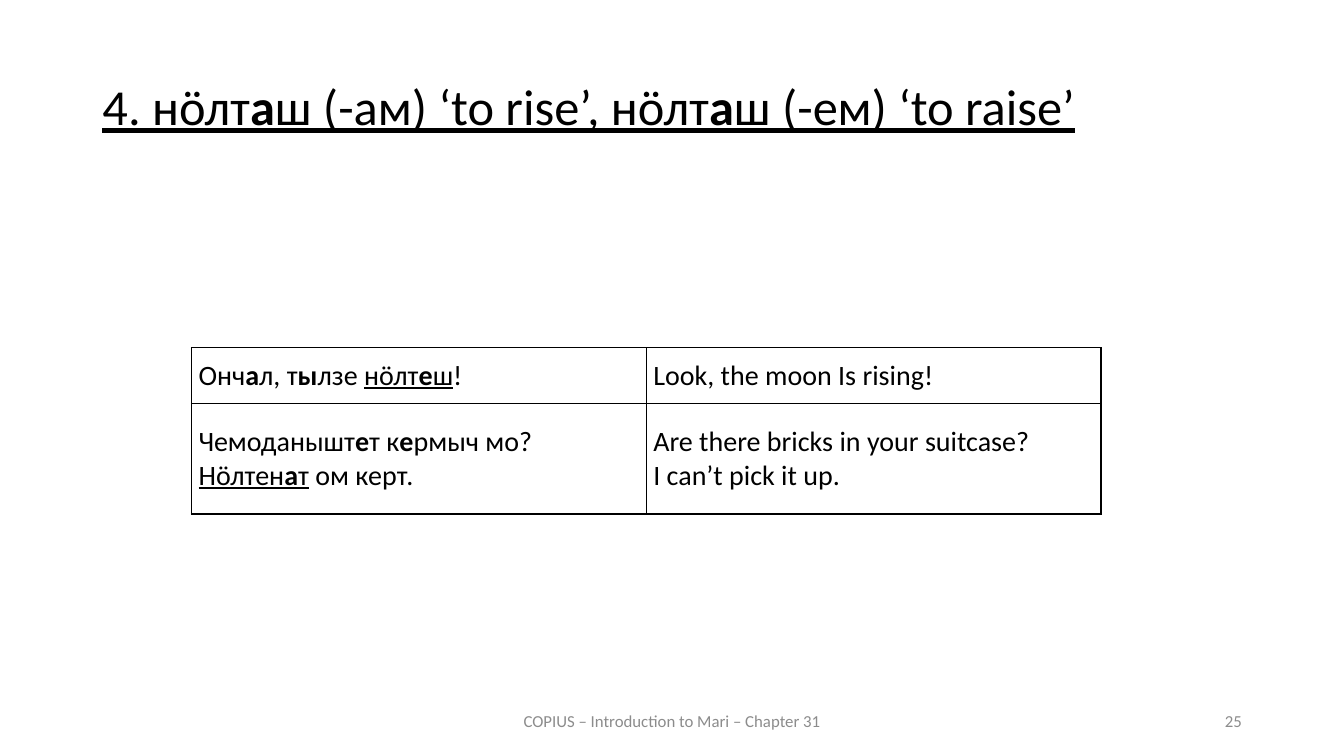
from dataclasses import dataclass

from pptx import Presentation
from pptx.dml.color import RGBColor
from pptx.enum.text import MSO_ANCHOR, MSO_AUTO_SIZE, PP_ALIGN
from pptx.oxml import parse_xml
from pptx.oxml.ns import nsdecls
from pptx.util import Inches, Pt


@dataclass(frozen=True)
class Theme:
    font: str = "Calibri"
    ink: str = "000000"
    gray: str = "8C8C8C"
    head: int = 36
    body: int = 20
    foot: int = 12
    rule: int = 1


class Page:
    """One slide on a grid of 160 columns by 90 rows, twelve to the inch."""

    def __init__(self, deck, theme):
        self.theme = theme
        self.slide = deck.slides.add_slide(deck.slide_layouts[5])

    def place(self, *cells):
        return [Inches(cell / 12) for cell in cells]

    def label(self, para, text, size, color):
        """Add runs; _marks_ underline and *marks* make bold."""
        for i, part in enumerate(text.split("_")):
            for j, bit in enumerate(part.split("*")):
                for k, line in enumerate(bit.split("\n")):
                    if k:
                        para.add_line_break()
                    if line:
                        run = para.add_run()
                        run.text = line
                        font = run.font
                        font.name, font.size = self.theme.font, Pt(size)
                        font.color.rgb = RGBColor.from_string(color)
                        font.underline, font.bold = i % 2 == 1, j % 2 == 1

    def title(self, text, *area):
        shape = self.slide.shapes.title
        shape.left, shape.top, shape.width, shape.height = self.place(*area)
        frame = shape.text_frame
        frame.word_wrap = True
        frame.auto_size = MSO_AUTO_SIZE.NONE
        frame.vertical_anchor = MSO_ANCHOR.TOP
        para = frame.paragraphs[0]
        para.alignment = PP_ALIGN.JUSTIFY
        para.line_spacing = 0.9
        self.label(para, text, self.theme.head, self.theme.ink)

    def footer(self, text, align, *area):
        frame = self.slide.shapes.add_textbox(*self.place(*area)).text_frame
        frame.word_wrap = True
        frame.vertical_anchor = MSO_ANCHOR.MIDDLE
        para = frame.paragraphs[0]
        para.alignment = align
        self.label(para, text, self.theme.foot, self.theme.gray)

    def border(self, cell):
        props = cell._tc.get_or_add_tcPr()
        for side in "LRTB":
            props.append(parse_xml(
                f'<a:ln{side} {nsdecls("a")} w="{Pt(self.theme.rule)}">'
                f'<a:solidFill><a:srgbClr val="{self.theme.ink}"/></a:solidFill>'
                f'</a:ln{side}>'))

    def table(self, rows, heights, *area):
        shape = self.slide.shapes.add_table(
            len(rows), len(rows[0]), *self.place(*area, sum(heights)))
        grid = shape.table
        grid.first_row = grid.horz_banding = False
        for r, (texts, height) in enumerate(zip(rows, heights)):
            grid.rows[r].height = self.place(height)[0]
            for c, text in enumerate(texts):
                cell = grid.cell(r, c)
                self.border(cell)
                cell.fill.background()
                cell.vertical_anchor = MSO_ANCHOR.MIDDLE
                cell.margin_left = cell.margin_right = Inches(0.07)
                cell.margin_top = cell.margin_bottom = 0
                self.label(cell.text_frame.paragraphs[0], text,
                           self.theme.body, self.theme.ink)


def main():
    deck = Presentation()
    deck.slide_width, deck.slide_height = Inches(13.33), Inches(7.5)
    page = Page(deck, Theme())
    page.title("_4. нӧлт*а*ш (-ам) ‘to rise’, нӧлт*а*ш (-ем) ‘to raise’_",
               11, 9.12, 138, 10)
    page.footer("COPIUS – Introduction to Mari – Chapter 31",
                PP_ALIGN.CENTER, 53, 83.4, 54, 4.8)
    page.footer("25", PP_ALIGN.RIGHT, 113, 83.4, 36, 4.8)
    page.table([
        ["Онч*а*л, т*ы*лзе _нӧлт*е*ш_!", "Look, the moon Is rising!"],
        ["Чемоданышт*е*т к*е*рмыч мо? _Нӧлтен*а*т_ ом керт.",
         "Are there bricks in your suitcase? \nI can’t pick it up."],
    ], [6.6, 13.2], 22.8, 41.4, 108.24)
    deck.save("out.pptx")


if __name__ == "__main__":
    main()
